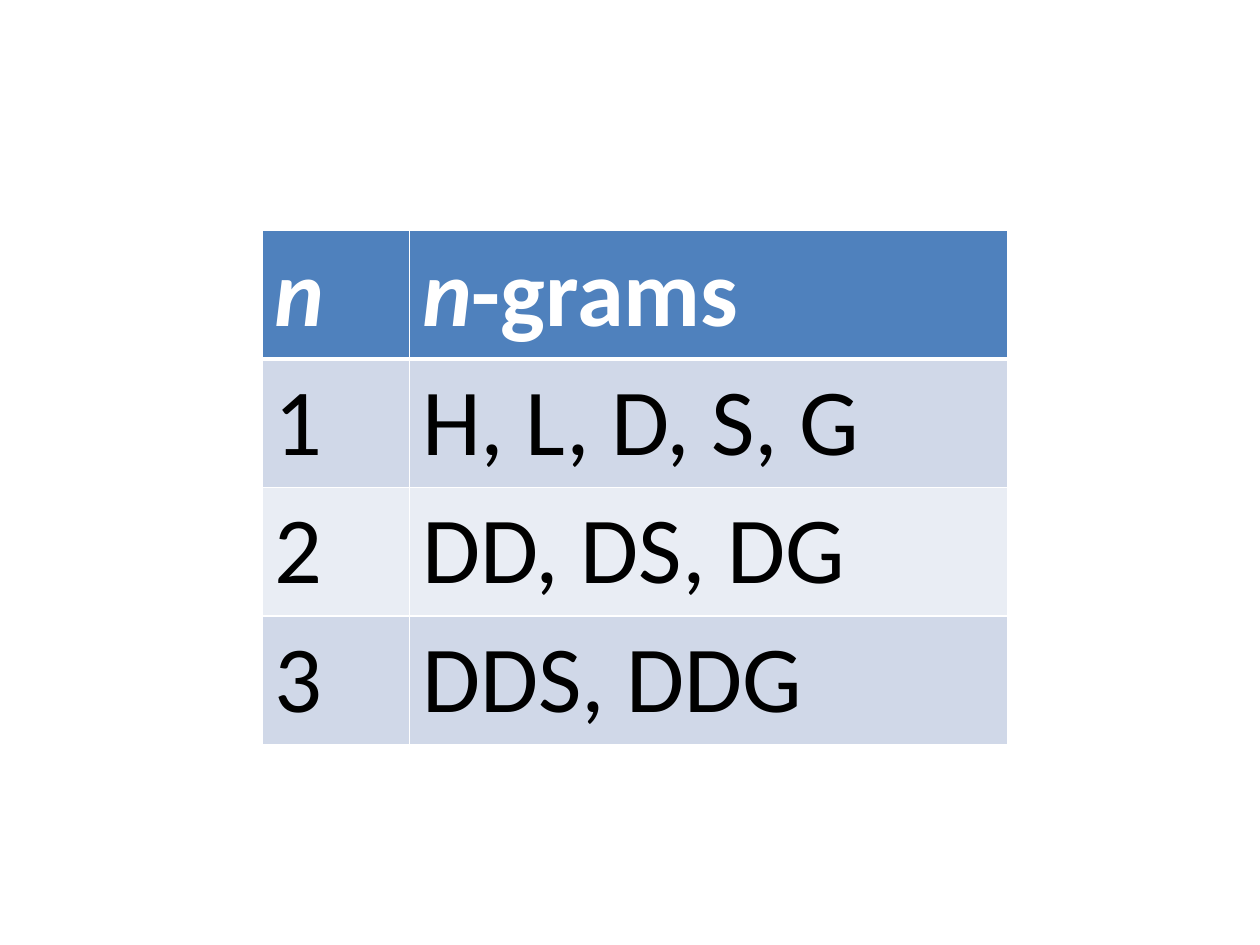
from lxml import etree
from pptx import Presentation
from pptx.dml.color import RGBColor
from pptx.oxml.ns import qn
from pptx.util import Inches, Pt

# Each cell is a list of (text, italic) runs
HEAD = [[("n", True)], [("n", True), ("-grams", False)]]
BODY = [("1", "H, L, D, S, G"), ("2", "DD, DS, DG"), ("3", "DDS, DDG")]
ROWS = [HEAD] + [[[(text, False)] for text in row] for row in BODY]

LEFT, TOP = 2.08, 1.83
WIDTHS = [1.17, 4.75]
HEIGHT = 1.02
WHITE, BLACK, BLUE = "FFFFFF", "000000", "4F81BD"
BANDS = ["D0D8E8", "E9EDF4"]


def rgb(code):
    return RGBColor.from_string(code)


def edge(cell, side, width):
    line = etree.SubElement(cell._tc.get_or_add_tcPr(), qn("a:ln" + side),
                            w=str(Pt(width)))
    fill = etree.SubElement(line, qn("a:solidFill"))
    etree.SubElement(fill, qn("a:srgbClr"), val=WHITE)


def fill_cell(cell, runs, row):
    head = row == 0
    # The rule under the header is thicker than the others
    widths = {"L": 1, "R": 1, "T": 3 if row == 1 else 1, "B": 3 if head else 1}
    for side, width in widths.items():
        edge(cell, side, width)
    cell.fill.solid()
    cell.fill.fore_color.rgb = rgb(BLUE if head else BANDS[(row - 1) % 2])
    para = cell.text_frame.paragraphs[0]
    for text, slant in runs:
        run = para.add_run()
        run.text = text
        font = run.font
        font.name, font.size = "Calibri", Pt(54)
        font.bold, font.italic = head, slant
        font.color.rgb = rgb(WHITE if head else BLACK)


deck = Presentation()
deck.slide_width, deck.slide_height = Inches(10), Inches(7.5)
slide = deck.slides.add_slide(deck.slide_layouts[6])
table = slide.shapes.add_table(
    len(ROWS), len(WIDTHS), Inches(LEFT), Inches(TOP),
    Inches(sum(WIDTHS)), Inches(HEIGHT * len(ROWS))).table

for col, width in zip(table.columns, WIDTHS):
    col.width = Inches(width)
for r, row in enumerate(ROWS):
    table.rows[r].height = Inches(HEIGHT)
    for c, runs in enumerate(row):
        fill_cell(table.cell(r, c), runs, r)

deck.save("out.pptx")
